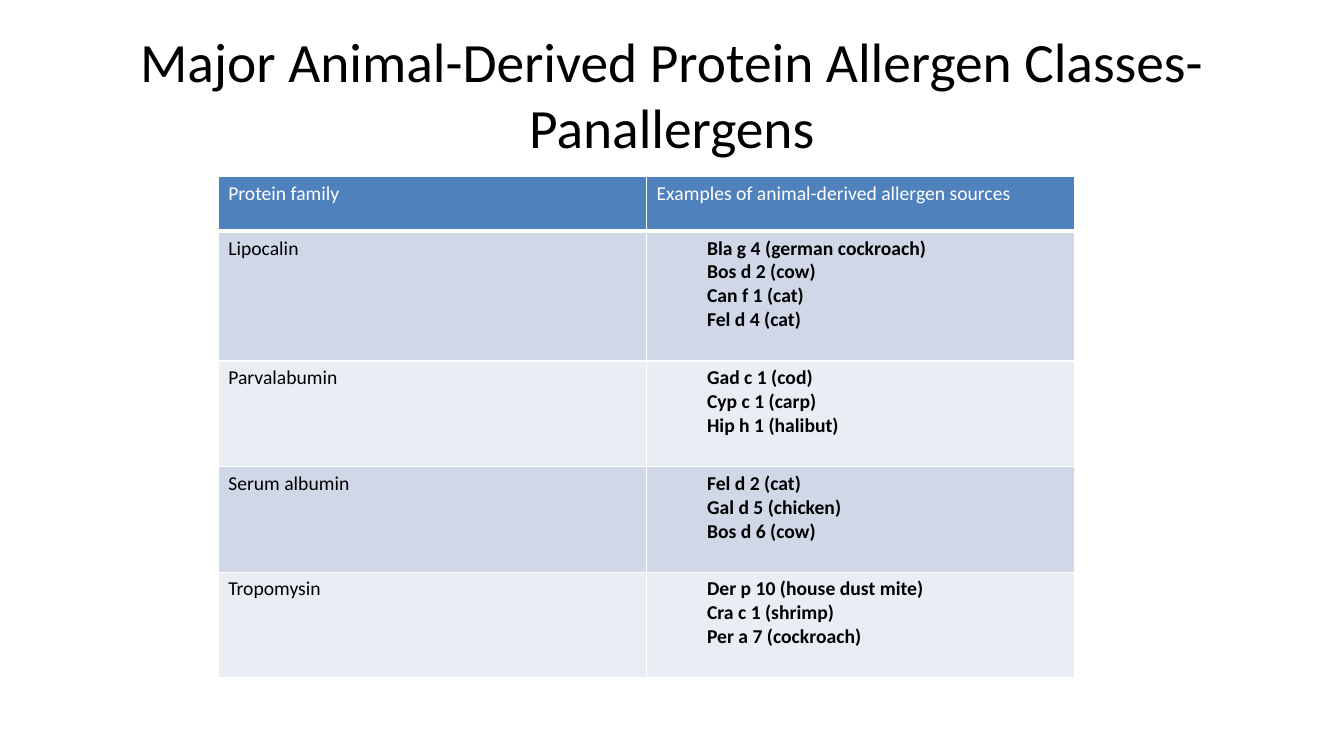
from lxml.etree import SubElement
from pptx import Presentation
from pptx.dml.color import RGBColor
from pptx.enum.text import MSO_ANCHOR as Anchor, MSO_AUTO_SIZE as AutoSize, PP_ALIGN as Align
from pptx.oxml import parse_xml
from pptx.oxml.ns import nsdecls, qn
from pptx.util import Cm, Pt

HEADINGS = ("Protein family", "Examples of animal-derived allergen sources")
FAMILIES = {
    "Lipocalin": ["Bla g 4 (german cockroach)", "Bos d 2 (cow)", "Can f 1 (cat)", "Fel d 4 (cat)"],
    "Parvalabumin": ["Gad c 1 (cod)", "Cyp c 1 (carp)", "Hip h 1 (halibut)"],
    "Serum albumin": ["Fel d 2 (cat)", "Gal d 5 (chicken)", "Bos d 6 (cow)"],
    "Tropomysin": ["Der p 10 (house dust mite)", "Cra c 1 (shrimp)", "Per a 7 (cockroach)"],
}


def rgb(value):
    return RGBColor.from_string(value)


class AllergenSlide:
    FONT = "Calibri"
    TEXT, LIGHT = "000000", "FFFFFF"
    HEADER, BANDS = "4F81BD", ("D0D8E8", "E9EDF4")

    def __init__(self, deck):
        self.slide = deck.slides.add_slide(deck.slide_layouts[5])

    def style(self, paragraph, size, color, bold=False):
        font = paragraph.font
        font.name, font.size, font.bold = self.FONT, Pt(size), bold
        font.color.rgb = rgb(color)

    def title(self, wording, left, top, width, height):
        heading = self.slide.shapes.title
        heading.left, heading.top = Cm(left), Cm(top)
        heading.width, heading.height = Cm(width), Cm(height)
        frame = heading.text_frame
        frame.text = wording
        frame.word_wrap, frame.auto_size = True, AutoSize.NONE
        frame.vertical_anchor = Anchor.MIDDLE
        frame.paragraphs[0].alignment = Align.CENTER
        self.style(frame.paragraphs[0], 39.6, self.TEXT)

    def borders(self, cell, bottom=1):
        properties = cell._tc.get_or_add_tcPr()
        for position, (side, points) in enumerate(
                (("L", 1), ("R", 1), ("T", 1), ("B", bottom))):
            line = parse_xml(f'<a:ln{side} {nsdecls("a")} w="{Pt(points)}"/>')
            fill = SubElement(line, qn("a:solidFill"))
            SubElement(fill, qn("a:srgbClr"), val=self.LIGHT)
            properties.insert(position, line)

    def cell(self, cell, lines, fill, color, bold=False, indent=0, bottom=1):
        cell.fill.solid()
        cell.fill.fore_color.rgb = rgb(fill)
        self.borders(cell, bottom)
        cell.text = "\n".join(lines)
        for paragraph in cell.text_frame.paragraphs:
            self.style(paragraph, 14, color, bold)
            if indent:
                paragraph.level = 1
                paragraph._p.get_or_add_pPr().set("marL", str(Cm(indent)))

    def table(self, headings, families, left, top, width, row_heights):
        table = self.slide.shapes.add_table(
            len(row_heights), len(headings), Cm(left), Cm(top),
            Cm(width), Cm(sum(row_heights))).table
        for row, height in zip(table.rows, row_heights):
            row.height = Cm(height)

        # Header row
        for column, heading in enumerate(headings):
            self.cell(table.cell(0, column), [heading], self.HEADER, self.LIGHT, bottom=3)

        # One banded row per protein family
        for row, (family, sources) in enumerate(families.items(), start=1):
            band = self.BANDS[(row - 1) % 2]
            self.cell(table.cell(row, 0), [family], band, self.TEXT)
            self.cell(table.cell(row, 1), sources, band, self.TEXT, bold=True, indent=1.27)


def main():
    deck = Presentation()
    deck.slide_width, deck.slide_height = Cm(33.87), Cm(19.05)
    panallergens = AllergenSlide(deck)
    panallergens.title("Major Animal-Derived Protein Allergen Classes- Panallergens",
                       1.69, 0.76, 30.48, 3.18)
    panallergens.table(HEADINGS, FAMILIES, 5.5, 4.45, 21.59,
                       (1.38, 3.27, 2.66, 2.66, 2.66))
    deck.save("out.pptx")


if __name__ == "__main__":
    main()
